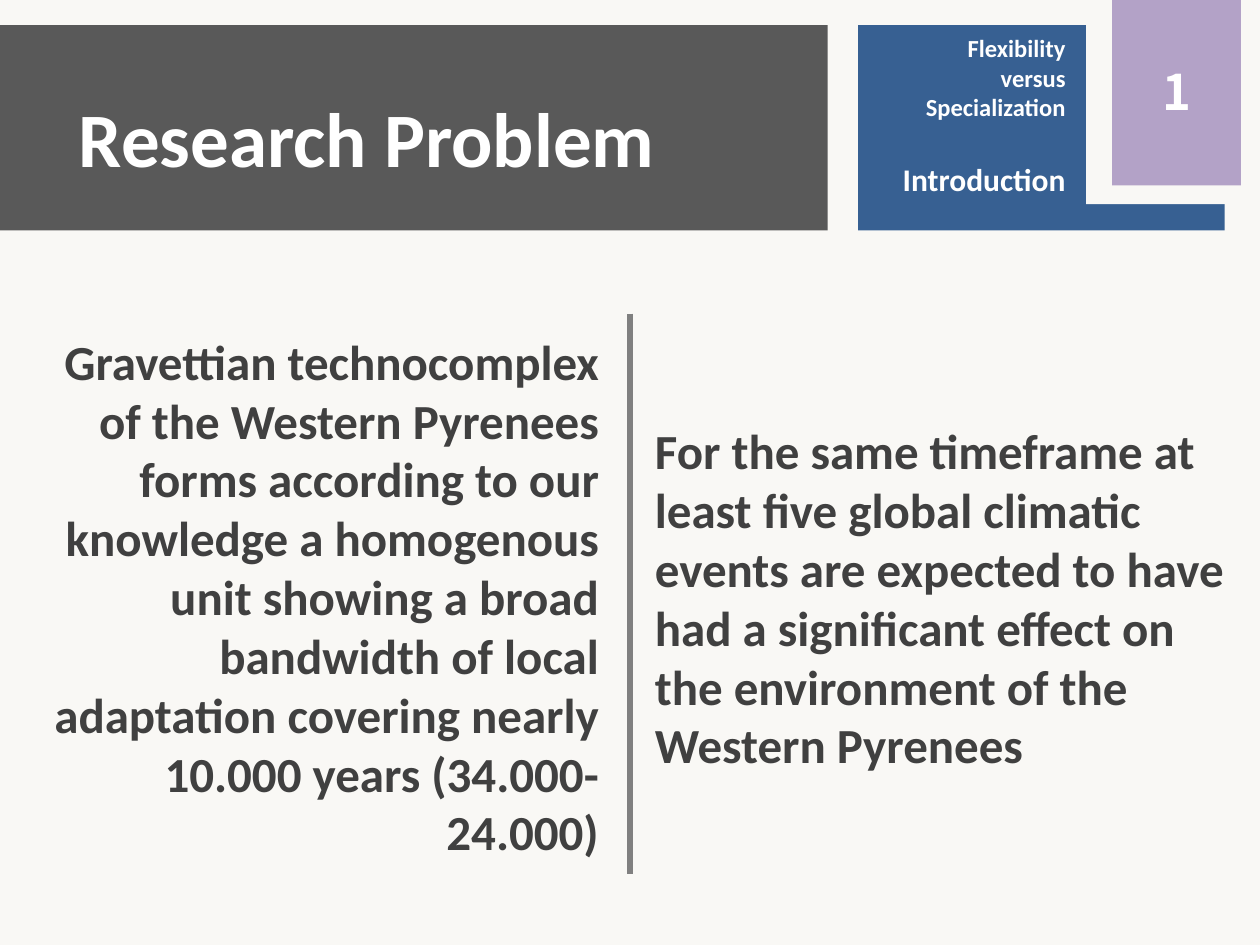
from dataclasses import dataclass

from lxml.etree import SubElement
from pptx import Presentation
from pptx.dml.color import RGBColor
from pptx.enum.shapes import MSO_CONNECTOR, MSO_SHAPE
from pptx.enum.text import MSO_ANCHOR, MSO_AUTO_SIZE, PP_ALIGN
from pptx.oxml.ns import qn
from pptx.util import Inches, Pt


@dataclass(frozen=True)
class Theme:
    """Colours, fonts and type sizes of the deck."""
    paper: str = "F9F8F5"
    band: str = "595959"
    blue: str = "376092"
    lilac: str = "B3A2C7"
    rule: str = "808080"
    body: str = "404040"
    white: str = "FFFFFF"
    font: str = "Calibri"
    number_font: str = "Noto Sans CJK SC"
    title_pt: int = 44
    body_pt: int = 28
    section_pt: int = 18
    topic_pt: int = 14


@dataclass(frozen=True)
class Box:
    """A rectangle in inches that can hand out shares of itself."""
    x: float
    y: float
    w: float
    h: float

    def share(self, x, y, w, h):
        """Return the sub-box given as shares of this box."""
        return Box(self.x + x * self.w, self.y + y * self.h, w * self.w, h * self.h)

    def emu(self):
        """Return left, top, width and height as lengths."""
        return [Inches(v) for v in (self.x, self.y, self.w, self.h)]


T = Theme()
PAGE = Box(0, 0, 10, 7.5)
BLEED = 0.03


def add_rect(slide, box, color):
    """Add a flat rectangle without outline."""
    sp = slide.shapes.add_shape(MSO_SHAPE.RECTANGLE, *box.emu())
    sp.shadow.inherit = False
    sp.fill.solid()
    sp.fill.fore_color.rgb = RGBColor.from_string(color)
    sp.line.fill.background()
    return sp


def style(p, size, color=T.white, align=PP_ALIGN.LEFT, font=T.font):
    """Format a paragraph in bold type."""
    p.alignment = align
    p.font.name, p.font.size, p.font.bold = font, Pt(size), True
    p.font.color.rgb = RGBColor.from_string(color)


def add_title(slide, box, text):
    """Place the dark band and the slide title on it."""
    add_rect(slide, box, T.band)
    title = slide.shapes.title
    title.left, title.top, title.width, title.height = box.share(0.08, 0.05, 1.29, 0.99).emu()
    title.element.getparent().append(title.element)
    tf = title.text_frame
    tf.text = text
    tf.auto_size = MSO_AUTO_SIZE.NONE
    tf.vertical_anchor = MSO_ANCHOR.MIDDLE
    style(tf.paragraphs[0], T.title_pt)


def add_section(slide, box, topic, section, number):
    """Place the blue section panel with its numbered tab."""
    add_rect(slide, box, T.blue)
    notch = Box(8.62, -BLEED, PAGE.w - 8.62, 1.65)
    add_rect(slide, notch, T.paper)
    tab = add_rect(slide, notch.share(0.15, 0, 0.74, 0.91), T.lilac)
    tab.text_frame.text = number
    tab.text_frame.vertical_anchor = MSO_ANCHOR.MIDDLE
    style(tab.text_frame.paragraphs[0], T.body_pt, align=PP_ALIGN.CENTER, font=T.number_font)
    label = add_rect(slide, box.share(0.03, 0.01, 0.57, 0.87), T.blue)
    tf = label.text_frame
    tf.word_wrap = True
    tf.vertical_anchor = MSO_ANCHOR.TOP
    tf.text = topic
    style(tf.paragraphs[0], T.topic_pt, align=PP_ALIGN.RIGHT)
    p = tf.add_paragraph()
    p.text = section
    p.space_before = Pt(22)
    style(p, T.section_pt, align=PP_ALIGN.RIGHT)


def add_statement(slide, box, text, align):
    """Place one body statement."""
    tf = slide.shapes.add_textbox(*box.emu()).text_frame
    tf.word_wrap = True
    tf.auto_size = MSO_AUTO_SIZE.SHAPE_TO_FIT_TEXT
    tf.text = text
    style(tf.paragraphs[0], T.body_pt, T.body, align)


def add_comparison(slide, box, left, right):
    """Place two statements on either side of a vertical rule."""
    add_statement(slide, box.share(0.03, 0.02, 0.455, 0.98), left, PP_ALIGN.RIGHT)
    add_statement(slide, box.share(0.51, 0.18, 0.48, 0.66), right, PP_ALIGN.LEFT)
    x, y, w, h = box.emu()
    rule = slide.shapes.add_connector(MSO_CONNECTOR.STRAIGHT, x + w // 2, y, x + w // 2, y + h)
    rule.line.color.rgb = RGBColor.from_string(T.rule)
    rule.line.width = Pt(3)
    SubElement(rule.element.spPr, qn("a:effectLst"))


def main():
    """Build and save the slide."""
    prs = Presentation()
    prs.slide_width, prs.slide_height = Inches(PAGE.w), Inches(PAGE.h)
    slide = prs.slides.add_slide(prs.slide_layouts[5])
    add_rect(slide, Box(0, -BLEED, PAGE.w, PAGE.h + BLEED), T.paper)
    add_title(slide, Box(0, 0.2, 6.57, 1.63), "Research Problem")
    add_comparison(
        slide, Box(0, 2.49, PAGE.w, 4.45),
        "Gravettian technocomplex of the Western Pyrenees forms according to our knowledge "
        "a homogenous unit showing a broad bandwidth of local adaptation covering nearly "
        "10.000 years (34.000-24.000)",
        "For the same timeframe at least five global climatic events are expected to have "
        "had a significant effect on the environment of the Western Pyrenees")
    add_section(slide, Box(6.81, 0.2, 2.91, 1.63),
                "Flexibility\vversus\vSpecialization", "Introduction", "1")
    prs.save("out.pptx")


if __name__ == "__main__":
    main()
